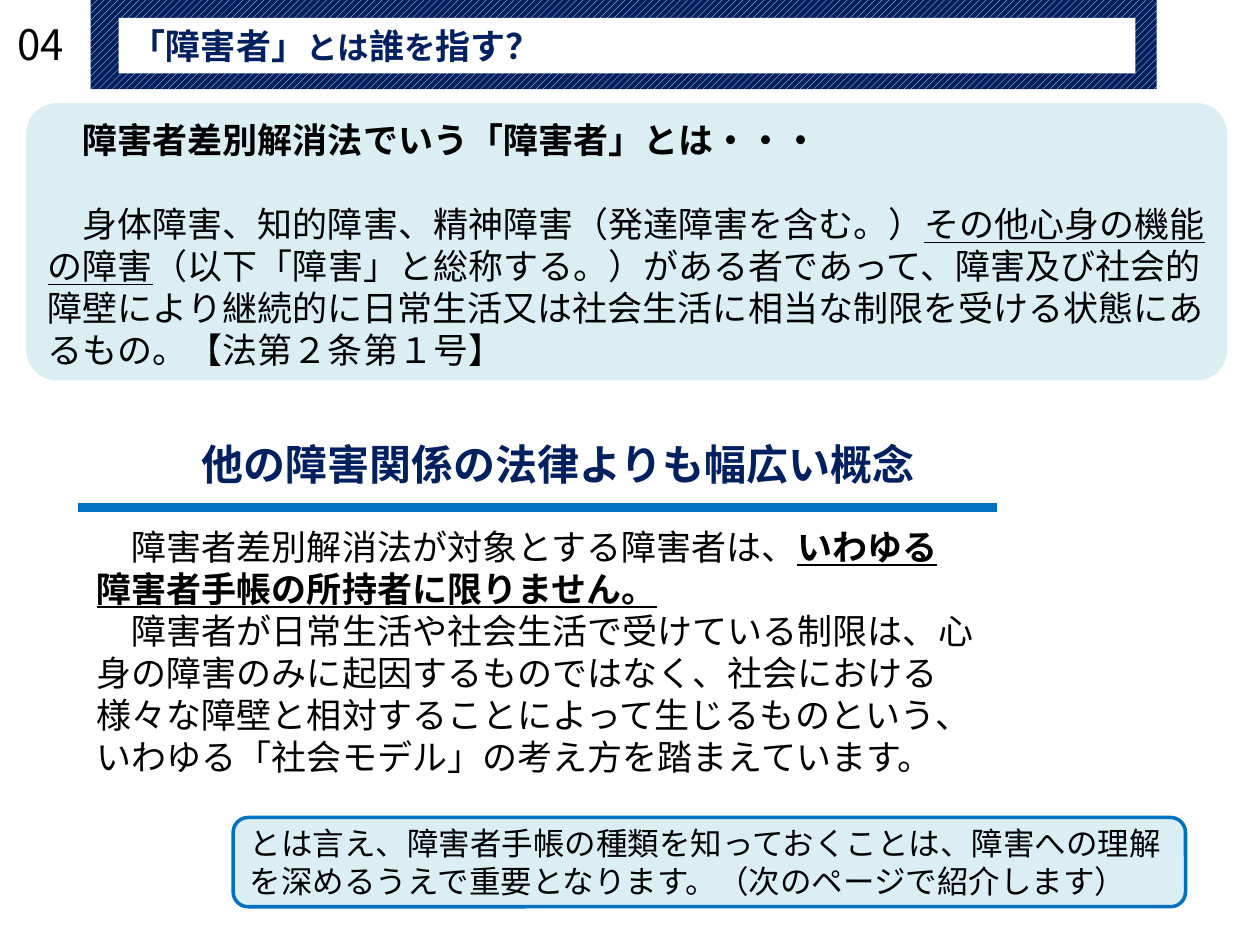
from dataclasses import dataclass
from typing import Optional

from lxml.etree import SubElement
from pptx import Presentation
from pptx.dml.color import RGBColor
from pptx.enum.dml import MSO_PATTERN
from pptx.enum.shapes import MSO_SHAPE
from pptx.enum.text import MSO_ANCHOR, MSO_AUTO_SIZE, PP_ALIGN
from pptx.oxml import parse_xml
from pptx.oxml.ns import nsdecls, qn
from pptx.util import Cm, Pt

FONT = "Noto Sans CJK JP"
COLORS = {"navy": "002060", "blue": "0070C0", "pale": "DBEEF4", "white": "FFFFFF", "black": "000000"}


@dataclass
class Span:
    text: str
    bold: Optional[bool] = None
    underline: Optional[bool] = None
    size: Optional[float] = None


@dataclass
class Para:
    spans: list[Span]
    gap_after: float = 0


@dataclass
class Block:
    box: tuple[float, float, float, float]
    paras: list[Para]
    size: float
    color: str = "black"
    bold: bool = False
    kind: Optional[MSO_SHAPE] = None
    fill: str = "pale"
    line: Optional[str] = None
    corner: Optional[float] = None
    middle: bool = False
    grow: bool = False
    outline: Optional[str] = None


DEFINITION = Block((0.53, 2.08, 24.21, 5.59), [
    Para([Span("\u3000障害者差別解消法でいう「障害者」とは・・・".replace("\u3000", "　"), bold=True)], gap_after=24),
    Para([
        Span("　身体障害、知的障害、精神障害（発達障害を含む。）"),
        Span("その他心身の機能の障害", underline=True),
        Span("（以下「障害」と総称する。）がある者であって、障害及び社会的障壁により継続的に日常生活又は"
             "社会生活に相当な制限を受ける状態にあるもの。【法第２条第１号】"),
    ]),
], 20, kind=MSO_SHAPE.ROUNDED_RECTANGLE, corner=0.11)
DEFINITION.paras[0].spans[0].text = "　障害者差別解消法でいう「障害者」とは・・・"

EXPLANATION = Block((1.7, 10.46, 18.8, 5.38), [
    Para([Span("　障害者差別解消法が対象とする障害者は、"), Span("いわゆる", bold=True, underline=True)]),
    Para([Span("障害者手帳の所持者に限りません。", bold=True, underline=True)]),
    Para([Span("　障害者が日常生活や社会生活で受けている制限は、心身の障害のみに起因するものではなく、"
               "社会における様々な障壁と相対することによって生じるものという、"
               "いわゆる「社会モデル」の考え方を踏まえています。")]),
], 20, grow=True)

HANDBOOK_NOTE = Block((4.7, 16.48, 19.2, 1.8), [
    Para([Span("とは言え、障害者手帳の種類を知っておくことは、障害への理解を深めるうえで"
               "重要となります。（次のページで紹介します）")]),
], 18, kind=MSO_SHAPE.ROUNDED_RECTANGLE, line="blue", middle=True)

CONCEPT_HEADING = Block((3.81, 8.71, 16.99, 1.27), [
    Para([Span("他の障害関係の法律よりも幅広い概念")]),
], 24, color="navy", bold=True, grow=True)

TITLE = Block((2.39, 0.36, 20.5, 1.12), [
    Para([Span("「障害者」"), Span("とは", size=18), Span("誰"), Span("を", size=18), Span("指す？")]),
], 20, color="navy", bold=True, kind=MSO_SHAPE.RECTANGLE, fill="white", middle=True, grow=True)

PAGE_NUMBER = Block((0.1, 0.25, 1.6, 1.27), [Para([Span("04")])], 24, grow=True, outline="pale")


def rgb(name: str) -> RGBColor:
    return RGBColor.from_string(COLORS[name])


def line_xml(tag: str, name: str, points: float):
    return parse_xml(f'<a:{tag} {nsdecls("a")} w="{Pt(points)}"><a:solidFill>'
                     f'<a:srgbClr val="{COLORS[name]}"/></a:solidFill></a:{tag}>')


def add_para(paragraph, para: Para, block: Block) -> None:
    paragraph.alignment = PP_ALIGN.LEFT
    paragraph.space_after = Pt(para.gap_after)
    font = paragraph.font
    font.size, font.bold, font.name = Pt(block.size), block.bold, FONT
    font.color.rgb = rgb(block.color)
    defaults = paragraph._p.pPr.find(qn("a:defRPr"))
    SubElement(defaults, qn("a:ea")).set("typeface", FONT)
    for span in para.spans:
        run = paragraph.add_run()
        run.text = span.text
        run.font.bold, run.font.underline = span.bold, span.underline
        if span.size:
            run.font.size = Pt(span.size)
        if block.outline:
            run._r.get_or_add_rPr().insert(0, line_xml("ln", block.outline, 0.75))


def add_block(shapes, block: Block) -> None:
    box = [Cm(length) for length in block.box]
    if block.kind is None:
        holder = shapes.add_textbox(*box)
    else:
        holder = shapes.add_shape(block.kind, *box)
        holder.shadow.inherit = False
        holder.fill.solid()
        holder.fill.fore_color.rgb = rgb(block.fill)
        if block.line:
            holder.line.color.rgb = rgb(block.line)
            holder.line.width = Pt(2)
        else:
            holder.line.fill.background()
        if block.corner:
            holder.adjustments[0] = block.corner
    frame = holder.text_frame
    frame.word_wrap = True
    frame.auto_size = MSO_AUTO_SIZE.SHAPE_TO_FIT_TEXT if block.grow else MSO_AUTO_SIZE.NONE
    frame.vertical_anchor = MSO_ANCHOR.MIDDLE if block.middle else MSO_ANCHOR.TOP
    for index, para in enumerate(block.paras):
        add_para(frame.add_paragraph() if index else frame.paragraphs[0], para, block)


def add_heading_rule(shapes) -> None:
    table = shapes.add_table(1, 1, Cm(1.57), Cm(9.14), Cm(18.52), Cm(1.09)).table
    table.first_row = table.horz_banding = False
    cell = table.cell(0, 0)
    cell.fill.background()
    cell.text_frame.paragraphs[0].font.size = Pt(12)
    properties = cell._tc.get_or_add_tcPr()
    for index, side in enumerate(("lnL", "lnR", "lnT")):
        properties.insert(index, parse_xml(f'<a:{side} {nsdecls("a")}><a:noFill/></a:{side}>'))
    properties.insert(3, line_xml("lnB", "blue", 6))


def add_title_band(shapes) -> None:
    band = shapes.add_shape(MSO_SHAPE.RECTANGLE, Cm(1.83), 0, Cm(21.49), Cm(1.8))
    band.shadow.inherit = False
    band.fill.patterned()
    band.fill.pattern = MSO_PATTERN.WIDE_UPWARD_DIAGONAL
    band.fill.fore_color.rgb = rgb("white")
    band.fill.back_color.rgb = rgb("navy")
    band.line.fill.background()


def main() -> None:
    """Build the slide that explains who counts as a person with a disability."""
    deck = Presentation()
    deck.slide_width, deck.slide_height = Cm(25.4), Cm(19.05)
    shapes = deck.slides.add_slide(deck.slide_layouts[6]).shapes
    add_block(shapes, DEFINITION)
    add_block(shapes, EXPLANATION)
    add_heading_rule(shapes)
    add_block(shapes, HANDBOOK_NOTE)
    add_block(shapes, CONCEPT_HEADING)
    add_title_band(shapes)
    add_block(shapes, TITLE)
    add_block(shapes, PAGE_NUMBER)
    deck.save("out.pptx")


if __name__ == "__main__":
    main()
